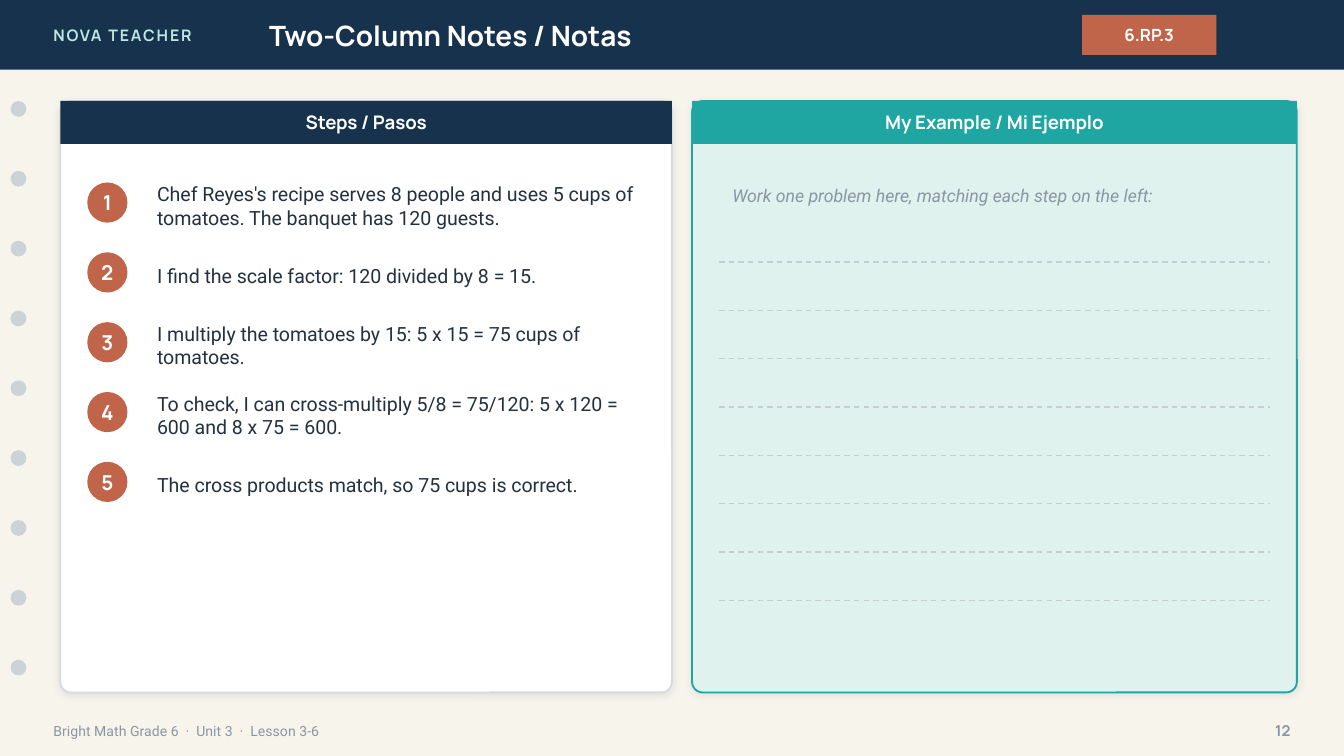
from lxml.etree import SubElement
from pptx import Presentation
from pptx.dml.color import RGBColor
from pptx.enum.dml import MSO_LINE
from pptx.enum.shapes import MSO_CONNECTOR, MSO_SHAPE as Shape
from pptx.enum.text import MSO_ANCHOR, MSO_AUTO_SIZE, PP_ALIGN as Align
from pptx.oxml.ns import qn
from pptx.util import Cm, Pt

CREAM = RGBColor(0xF7, 0xF4, 0xEC)
NAVY = RGBColor(0x17, 0x32, 0x4D)
TEAL = RGBColor(0x1F, 0xA6, 0xA2)
MINT = RGBColor(0xDF, 0xF2, 0xEE)
PALE_TEAL = RGBColor(0xBF, 0xE6, 0xE2)
CLAY = RGBColor(0xC0, 0x65, 0x4A)
WHITE = RGBColor(0xFF, 0xFF, 0xFF)
INK = RGBColor(0x24, 0x32, 0x3F)
MUTED = RGBColor(0x8A, 0x96, 0xA3)
HOLE = RGBColor(0xCB, 0xD3, 0xD9)
BORDER = RGBColor(0xD6, 0xDB, 0xDF)
RULE = RGBColor(0xC7, 0xCD, 0xD2)

HEADING_FONT = "Manrope"
BODY_FONT = "Roboto"

STEPS = [
    "Chef Reyes's recipe serves 8 people and uses 5 cups of tomatoes. The banquet has 120 guests.",
    "I find the scale factor: 120 divided by 8 = 15.",
    "I multiply the tomatoes by 15: 5 x 15 = 75 cups of tomatoes.",
    "To check, I can cross-multiply 5/8 = 75/120: 5 x 120 = 600 and 8 x 75 = 600.",
    "The cross products match, so 75 cups is correct.",
]

deck = Presentation()
deck.slide_width = Cm(25.4)
deck.slide_height = Cm(14.29)
page = deck.slides.add_slide(deck.slide_layouts[5])
page.background.fill.solid()
page.background.fill.fore_color.rgb = CREAM
shapes = page.shapes


def add_block(kind, left, top, width, height, color):
    block = shapes.add_shape(kind, Cm(left), Cm(top), Cm(width), Cm(height))
    block.shadow.inherit = False
    block.fill.solid()
    block.fill.fore_color.rgb = color
    block.line.fill.background()
    return block


def write(box, text, size, color, font=HEADING_FONT, bold=True, align=Align.LEFT):
    frame = box.text_frame
    frame.word_wrap = True
    frame.auto_size = MSO_AUTO_SIZE.NONE
    frame.vertical_anchor = MSO_ANCHOR.MIDDLE
    para = frame.paragraphs[0]
    para.alignment = align
    span = para.add_run()
    span.text = text
    span.font.name = font
    span.font.size = Pt(size)
    span.font.bold = bold
    span.font.color.rgb = color
    return span


add_block(Shape.RECTANGLE, 0, 0, 25.4, 1.32, NAVY)
box = shapes.add_textbox(Cm(0.76), Cm(0), Cm(6.1), Cm(1.32))
span = write(box, "NOVA TEACHER", 8.5, PALE_TEAL)
span.font._element.set("spc", "100")

title = shapes.title
title.left, title.top, title.width, title.height = Cm(4.83), Cm(0), Cm(14.22), Cm(1.32)
write(title, "Two-Column Notes / Notas", 15, WHITE)
shapes._spTree.append(title._element)

badge = add_block(Shape.RECTANGLE, 20.45, 0.28, 2.54, 0.76, CLAY)
write(badge, "6.RP.3", 9, WHITE, align=Align.CENTER)

for row in range(9):
    add_block(Shape.OVAL, 0.2, 1.91 + row * 1.32, 0.3, 0.3, HOLE)

box = shapes.add_textbox(Cm(0.76), Cm(13.46), Cm(17.78), Cm(0.71))
write(box, "Bright Math Grade 6  ·  Unit 3  ·  Lesson 3-6", 7.5, MUTED, BODY_FONT, False)
box = shapes.add_textbox(Cm(23.37), Cm(13.46), Cm(1.27), Cm(0.71))
write(box, "12", 8, MUTED, align=Align.RIGHT)

for heading, left, width, fill, border, band in [
    ("Steps / Pasos", 1.14, 11.56, WHITE, BORDER, NAVY),
    ("My Example / Mi Ejemplo", 13.08, 11.43, MINT, TEAL, TEAL),
]:
    card = add_block(Shape.ROUNDED_RECTANGLE, left, 1.91, width, 11.18, fill)
    card.adjustments[0] = 0.018
    card.line.color.rgb = border
    card.line.width = Pt(1)
    effects = card._element.spPr.find(qn("a:effectLst"))
    shadow = SubElement(effects, qn("a:outerShdw"), blurRad=str(Pt(4)),
                        dist=str(Pt(1)), dir="5400000", algn="bl", rotWithShape="0")
    tint = SubElement(shadow, qn("a:srgbClr"), val="1C2E42")
    SubElement(tint, qn("a:alpha"), val="10000")
    header = add_block(Shape.RECTANGLE, left, 1.91, width, 0.81, band)
    write(header, heading, 10, WHITE, align=Align.CENTER)

for number, step in enumerate(STEPS, 1):
    top = 3.3 + (number - 1) * 1.32
    circle = add_block(Shape.OVAL, 1.65, top + 0.15, 0.76, 0.76, CLAY)
    frame = circle.text_frame
    frame.margin_left = frame.margin_right = frame.margin_top = frame.margin_bottom = 0
    write(circle, str(number), 11, WHITE, align=Align.CENTER)
    box = shapes.add_textbox(Cm(2.72), Cm(top), Cm(9.6), Cm(1.17))
    write(box, step, 10.5, INK, BODY_FONT, False)

box = shapes.add_textbox(Cm(13.59), Cm(3.18), Cm(10.41), Cm(1.02))
span = write(box, "Work one problem here, matching each step on the left:", 9.5, MUTED, BODY_FONT, False)
span.font.italic = True

for row in range(8):
    top = Cm(4.95 + row * 0.914)
    rule = shapes.add_connector(MSO_CONNECTOR.STRAIGHT, Cm(13.59), top, Cm(24), top)
    rule.line.color.rgb = RULE
    rule.line.width = Pt(0.75)
    rule.line.dash_style = MSO_LINE.DASH
    SubElement(rule._element.spPr, qn("a:effectLst"))

deck.save("out.pptx")
